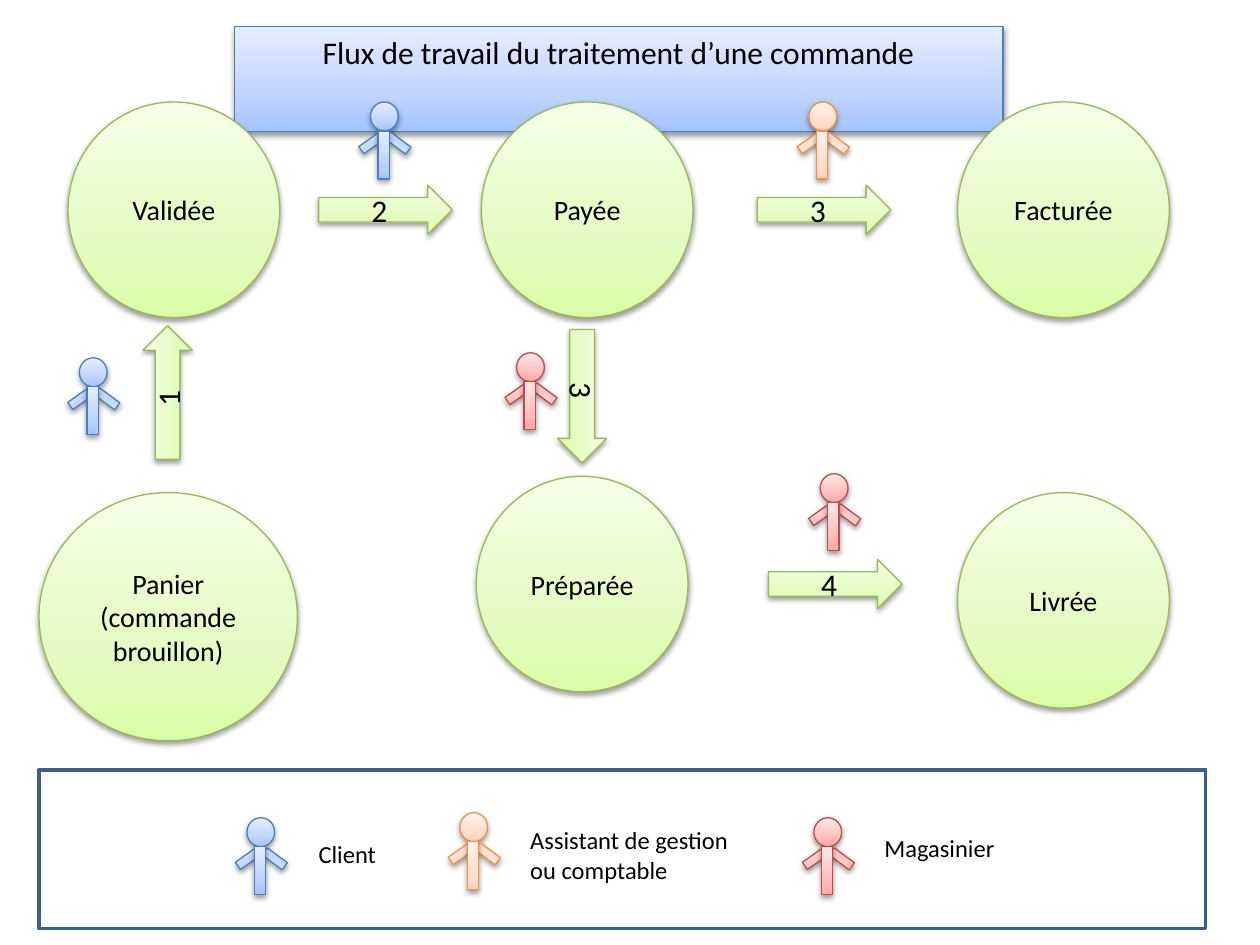
import copy
from dataclasses import dataclass

import pptx
from lxml import etree
from pptx.dml.color import RGBColor
from pptx.enum.shapes import MSO_SHAPE
from pptx.enum.text import MSO_ANCHOR, MSO_AUTO_SIZE, PP_ALIGN
from pptx.oxml.ns import qn
from pptx.util import Inches, Pt


@dataclass(frozen=True)
class Tint:
    line: str
    stops: tuple  # (position, colour), from the bottom edge upwards


def make_tint(line, bottom, middle, top):
    return Tint(line, ((0, bottom), (0.35, middle), (1, top)))


class Theme:
    font = "Calibri"
    text = "000000"
    frame = "3A5F8C"
    heading_size = 18
    state_size = 16
    legend_size = 14
    green = make_tint("98B955", "DAFDA7", "E4FCC2", "F5FFE7")
    blue = make_tint("4B7EBC", "A4C4FF", "BFD4FF", "E6EEFF")
    orange = make_tint("F69240", "FFD2BD", "FFDED0", "FFF2ED")
    red = make_tint("BF4C48", "FFA6A5", "FFC0BF", "FFE7E7")


CLIENT, ASSISTANT, STOREKEEPER = Theme.blue, Theme.orange, Theme.red

STATE_SIZE = (1.68, 1.71)
STATES = [
    ("Panier (commande brouillon)", 0.31, 3.91, (2.05, 1.97)),
    ("Payée", 3.82, 0.81, STATE_SIZE),
    ("Facturée", 7.6, 0.81, STATE_SIZE),
    ("Préparée", 3.78, 3.78, STATE_SIZE),
    ("Livrée", 7.6, 3.91, STATE_SIZE),
    ("Validée", 0.54, 0.81, STATE_SIZE),
]
# step number, left, top, rotation, actor, actor's left and top
STEPS = [
    ("1", 0.8, 2.92, 270, CLIENT, 0.54, 2.84),
    ("2", 2.53, 1.47, 0, CLIENT, 2.85, 0.81),
    ("3", 4.09, 2.95, 90, STOREKEEPER, 4.01, 2.8),
    ("3", 6.01, 1.47, 0, ASSISTANT, 6.33, 0.81),
    ("4", 6.1, 4.44, 0, STOREKEEPER, 6.42, 3.76),
]
# role, label box, wraps, actor, actor's left and top
LEGEND = [
    ("Client", (2.43, 6.61, 0.66, 0.34), False, CLIENT, 1.87, 6.49),
    ("Assistant de gestion ou comptable", (4.11, 6.5, 1.99, 0.57), True,
     ASSISTANT, 3.56, 6.45),
    ("Magasinier", (6.92, 6.56, 1.09, 0.34), False, STOREKEEPER, 6.37, 6.49),
]
# head, left arm, right arm, body: offset, size and rotation
FIGURE = [
    (MSO_SHAPE.OVAL, 0.09, 0, 0.22, 0.23, 0),
    (MSO_SHAPE.RECTANGLE, 0, 0.29, 0.2, 0.07, 324.7),
    (MSO_SHAPE.RECTANGLE, 0.21, 0.29, 0.2, 0.07, 216.6),
    (MSO_SHAPE.RECTANGLE, 0.15, 0.23, 0.09, 0.38, 0),
]


def apply_tint(shape, tint):
    """Give a shape its three-stop gradient, thin outline and soft shadow."""
    shape.fill.gradient()
    shape.fill.gradient_angle = 90
    stop_list = shape.element.spPr.find(qn("a:gradFill")).find(qn("a:gsLst"))
    stop_list.append(copy.deepcopy(stop_list[-1]))
    for stop, (position, colour) in zip(shape.fill.gradient_stops, tint.stops):
        stop.position = position
        stop.color.rgb = RGBColor.from_string(colour)

    shape.line.color.rgb = RGBColor.from_string(tint.line)
    shape.line.width = Pt(0.75)

    shape.shadow.inherit = False
    effects = shape.element.spPr.find(qn("a:effectLst"))
    shadow = etree.SubElement(effects, qn("a:outerShdw"), blurRad="40000",
                              dist="20000", dir="5400000", rotWithShape="0")
    colour = etree.SubElement(shadow, qn("a:srgbClr"), val="000000")
    etree.SubElement(colour, qn("a:alpha"), val="38000")


def write(shape, wording, size, align):
    paragraph = shape.text_frame.paragraphs[0]
    paragraph.text = wording
    paragraph.alignment = align
    font = paragraph.runs[0].font
    font.name = Theme.font
    font.size = Pt(size)
    font.color.rgb = RGBColor.from_string(Theme.text)


def add_tinted(shapes, kind, box, tint, rotation=0):
    shape = shapes.add_shape(kind, *map(Inches, box))
    shape.rotation = rotation
    apply_tint(shape, tint)
    return shape


def add_title(slide, wording):
    title = slide.shapes.title
    title.left, title.top = Inches(1.86), Inches(0.21)
    title.width, title.height = Inches(6.1), Inches(0.4)
    apply_tint(title, Theme.blue)
    write(title, wording, Theme.heading_size, PP_ALIGN.CENTER)
    title.text_frame.vertical_anchor = MSO_ANCHOR.TOP
    title.text_frame.auto_size = MSO_AUTO_SIZE.SHAPE_TO_FIT_TEXT


def add_state(slide, name, left, top, size):
    state = add_tinted(slide.shapes, MSO_SHAPE.OVAL, (left, top, *size), Theme.green)
    write(state, name, Theme.state_size, PP_ALIGN.CENTER)


def add_step(slide, number, left, top, rotation):
    arrow = add_tinted(slide.shapes, MSO_SHAPE.RIGHT_ARROW,
                       (left, top, 1.06, 0.39), Theme.green, rotation)
    write(arrow, number, Theme.heading_size, PP_ALIGN.CENTER)


def add_actor(slide, tint, left, top):
    actor = slide.shapes.add_group_shape()
    for kind, dx, dy, width, height, rotation in FIGURE:
        add_tinted(actor.shapes, kind, (left + dx, top + dy, width, height),
                   tint, rotation)


def add_legend_label(slide, role, box, wraps):
    label = slide.shapes.add_textbox(*map(Inches, box))
    label.text_frame.word_wrap = wraps
    label.text_frame.auto_size = MSO_AUTO_SIZE.SHAPE_TO_FIT_TEXT
    write(label, role, Theme.legend_size, PP_ALIGN.LEFT)


def add_legend_frame(slide):
    frame = slide.shapes.add_shape(
        MSO_SHAPE.RECTANGLE, Inches(0.31), Inches(6.11), Inches(9.26), Inches(1.26))
    frame.fill.background()
    frame.line.color.rgb = RGBColor.from_string(Theme.frame)
    frame.line.width = Pt(2)
    frame.shadow.inherit = False


def main():
    deck = pptx.Presentation()
    deck.slide_width, deck.slide_height = Inches(10), Inches(7.5)
    slide = deck.slides.add_slide(deck.slide_layouts.get_by_name("Title Only"))

    add_title(slide, "Flux de travail du traitement d’une commande")
    for state in STATES:
        add_state(slide, *state)
    for number, left, top, rotation, actor, actor_left, actor_top in STEPS:
        add_step(slide, number, left, top, rotation)
        add_actor(slide, actor, actor_left, actor_top)
    for role, box, wraps, actor, actor_left, actor_top in LEGEND:
        add_legend_label(slide, role, box, wraps)
        add_actor(slide, actor, actor_left, actor_top)
    add_legend_frame(slide)

    deck.save("out.pptx")


if __name__ == "__main__":
    main()
